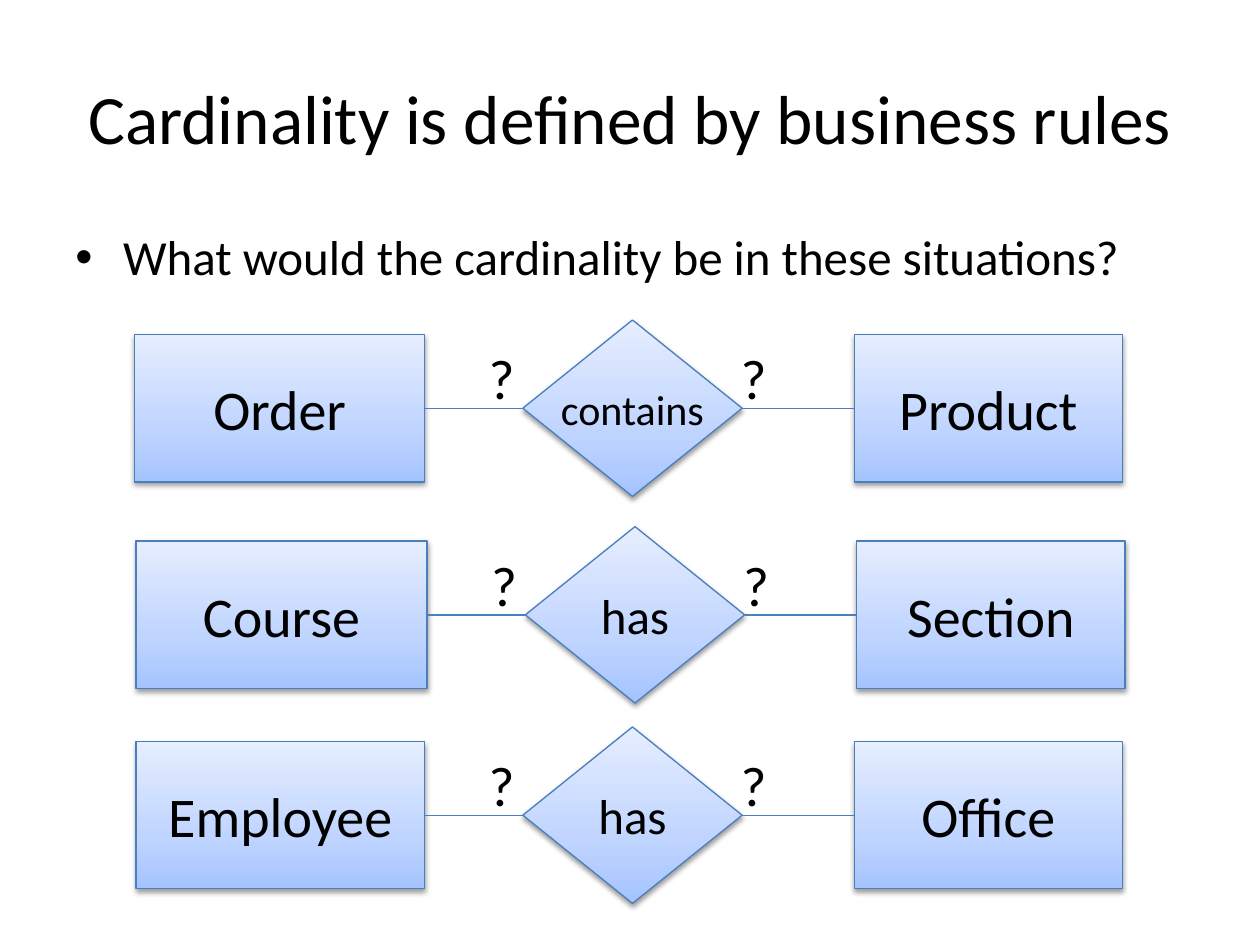
from lxml import etree
from pptx import Presentation
from pptx import util as u
from pptx.dml.color import RGBColor
from pptx.enum import shapes, text
from pptx.oxml.ns import qn

FONT = "Calibri"
BLACK, OUTLINE = "000000", "4B7EBC"
GRADIENT = [(0, "A4C4FF"), (35, "BFD4FF"), (100, "E6EEFF")]
CENTER = text.PP_ALIGN.CENTER
MIDDLE = text.MSO_ANCHOR.MIDDLE


def color(hex_value):
    return RGBColor.from_string(hex_value)


def add_xml(parent, tag, **attributes):
    return etree.SubElement(parent, qn(tag), attributes)


def write(shape, words, size, align=None, **frame_format):
    frame = shape.text_frame
    for name, value in {"word_wrap": True, **frame_format}.items():
        setattr(frame, name, value)
    paragraph = frame.paragraphs[0]
    paragraph.alignment = align
    run = paragraph.add_run()
    run.text = words
    for name, value in {"name": FONT, "size": u.Pt(size)}.items():
        setattr(run.font, name, value)
    run.font.color.rgb = color(BLACK)
    return paragraph


def place(shape, left, top, width, height):
    box = {"left": left, "top": top, "width": width, "height": height}
    for name, value in box.items():
        setattr(shape, name, u.Inches(value))


def style_line(line):
    line.color.rgb = color(OUTLINE)
    line.width = u.Pt(0.75)


def add_node(slide, kind, box, words, size, wrap=True):
    """Draw one gradient-filled entity or relationship."""
    shape = slide.shapes.add_shape(kind, *map(u.Inches, box))
    style_line(shape.line)
    write(shape, words, size, CENTER, word_wrap=wrap, vertical_anchor=MIDDLE)

    # Three-stop gradient, darkest at the bottom
    shape.fill.gradient()
    shape.fill.gradient_angle = 90
    properties = shape._element.spPr
    stops = properties.find(qn("a:gradFill")).find(qn("a:gsLst"))
    for stop in list(stops):
        stops.remove(stop)
    for position, hex_value in GRADIENT:
        stop = add_xml(stops, "a:gs", pos=str(position * 1000))
        add_xml(stop, "a:srgbClr", val=hex_value)

    # Soft shadow below
    shape.shadow.inherit = False
    shadow = add_xml(properties.find(qn("a:effectLst")), "a:outerShdw",
                     blurRad=str(u.Pt(3.1)), dist=str(u.Pt(1.6)),
                     dir="5400000", rotWithShape="0")
    shade = add_xml(shadow, "a:srgbClr", val=BLACK)
    add_xml(shade, "a:alpha", val="38000")
    return shape


def add_link(slide, start, end):
    """Join the left side of start to the right side of end."""
    link = slide.shapes.add_connector(shapes.MSO_CONNECTOR.STRAIGHT, 0, 0, 0, 0)
    link.begin_connect(start, 1)
    link.end_connect(end, 3)
    style_line(link.line)
    add_xml(link._element.spPr, "a:effectLst")


def add_title(slide, box):
    title = slide.shapes.title
    place(title, *box)
    write(title, "Cardinality is defined by business rules", 39.6, CENTER,
          vertical_anchor=MIDDLE, auto_size=text.MSO_AUTO_SIZE.NONE)


def add_question(slide, box):
    body = slide.shapes.add_textbox(*map(u.Inches, box))
    paragraph = write(body, "What would the cardinality be in these situations?", 28)
    properties = paragraph._p.get_or_add_pPr()
    properties.set("marL", str(u.Inches(0.38)))
    properties.set("indent", str(u.Inches(-0.38)))
    spacing = add_xml(properties, "a:spcBef")
    add_xml(spacing, "a:spcPct", val="20000")
    add_xml(properties, "a:buFont", typeface="Arial")
    add_xml(properties, "a:buChar", char="•")


def add_relationship(slide, box, first, verb, verb_size, second):
    """Entity, diamond and entity; columns are measured from the right edge."""
    left, top, width, height = box
    right = left + width
    entity_height = 1.17
    entity_top = top + (height - entity_height) / 2
    rectangle = shapes.MSO_SHAPE.RECTANGLE

    # Nodes
    source = add_node(slide, rectangle, (left, entity_top, width - 5.54, entity_height),
                      first, 32)
    diamond = add_node(slide, shapes.MSO_SHAPE.DIAMOND, (right - 4.76, top, 1.74, height),
                       verb, verb_size, wrap=False)
    target = add_node(slide, rectangle, (right - 2.13, entity_top, 2.13, entity_height),
                      second, 32)

    # Links
    add_link(slide, diamond, source)
    add_link(slide, target, diamond)

    # Unknown cardinalities
    for offset in (5.13, 3.13):
        mark_box = (right - offset, top + 0.14, 0.58, 0.64)
        mark = slide.shapes.add_textbox(*map(u.Inches, mark_box))
        write(mark, "?", 32, auto_size=text.MSO_AUTO_SIZE.SHAPE_TO_FIT_TEXT)


def main():
    presentation = Presentation()
    presentation.slide_width = u.Inches(10)
    presentation.slide_height = u.Inches(7.5)
    slide = presentation.slides.add_slide(presentation.slide_layouts[5])

    add_title(slide, (0.5, 0.3, 9, 1.25))
    add_question(slide, (0.5, 1.75, 9, 4.95))
    relationships = [
        ((1.07, 2.54, 7.84, 1.4), "Order", "contains", 24, "Product"),
        ((1.08, 4.18, 7.85, 1.4), "Course", "has", 28, "Section"),
        ((1.08, 5.77, 7.83, 1.4), "Employee", "has", 28, "Office"),
    ]
    for relationship in relationships:
        add_relationship(slide, *relationship)

    presentation.save("out.pptx")


if __name__ == "__main__":
    main()
